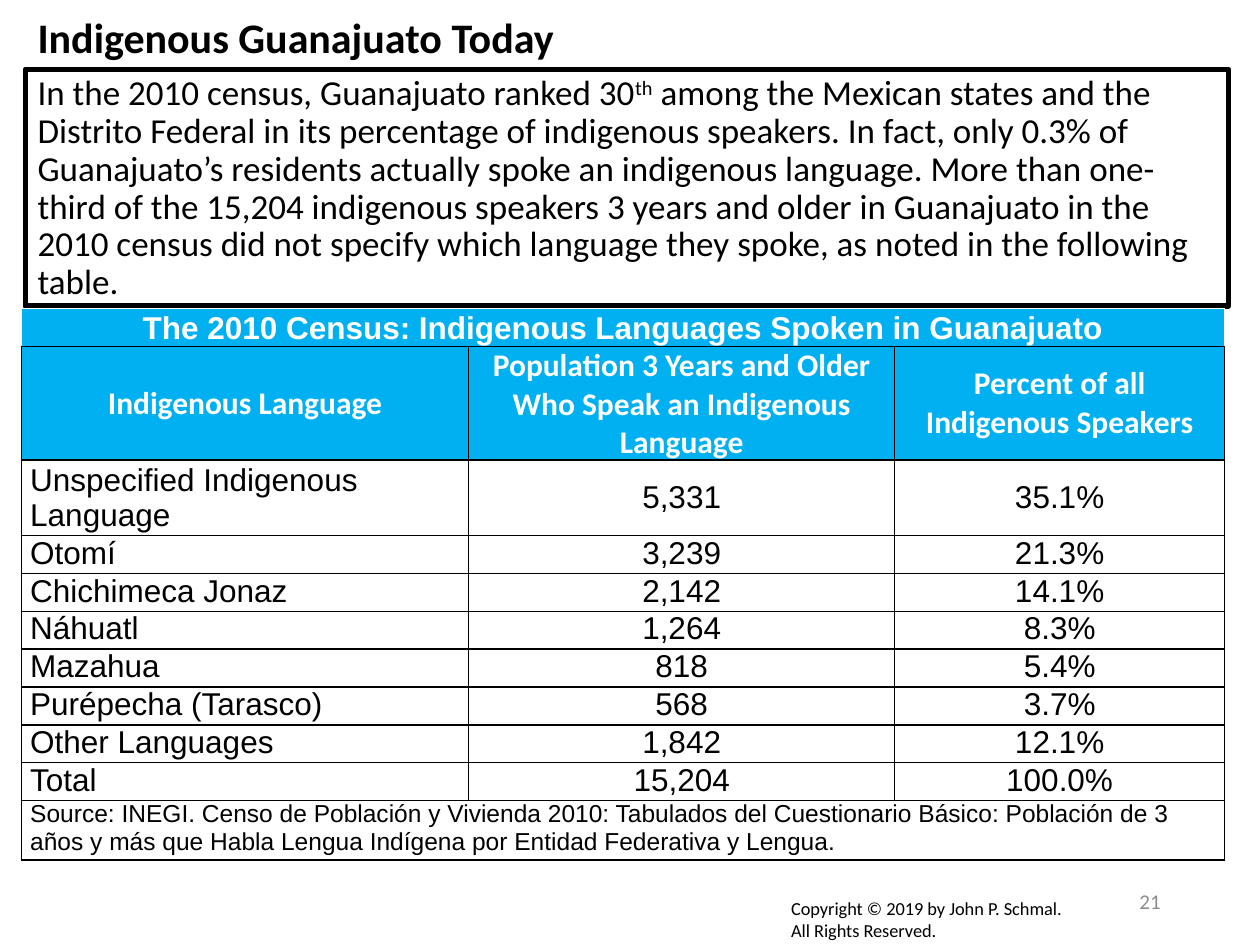
"""Build the slide on indigenous languages spoken in Guanajuato."""

import dataclasses
import typing

import lxml.etree
import pptx
import pptx.dml.color
import pptx.enum.shapes
import pptx.enum.text
import pptx.oxml.ns
import pptx.util

Inches = pptx.util.Inches
Pt = pptx.util.Pt
ALIGN = pptx.enum.text.PP_ALIGN
ANCHOR = pptx.enum.text.MSO_ANCHOR
COLORS = {"black": "000000", "white": "FFFFFF", "header": "00B0F0", "muted": "8C8C8C"}
SIDES = ("L", "R", "T", "B")


@dataclasses.dataclass(frozen=True)
class Language:
    name: str
    speakers: str
    percent: str


@dataclasses.dataclass(frozen=True)
class CellStyle:
    size: float = 18
    font: str = "Arial"
    color: str = "black"
    bold: bool = False
    fill: typing.Optional[str] = None
    anchor: ANCHOR = ANCHOR.TOP
    white_sides: tuple[str, ...] = ()


LANGUAGES = (
    Language("Unspecified Indigenous Language", "5,331", "35.1%"),
    Language("Otomí", "3,239", "21.3%"),
    Language("Chichimeca Jonaz", "2,142", "14.1%"),
    Language("Náhuatl", "1,264", "8.3%"),
    Language("Mazahua", "818", "5.4%"),
    Language("Purépecha (Tarasco)", "568", "3.7%"),
    Language("Other Languages", "1,842", "12.1%"),
    Language("Total", "15,204", "100.0%"),
)
HEADINGS = (
    "Indigenous Language",
    "Population 3 Years and Older Who Speak an Indigenous Language",
    "Percent of all Indigenous Speakers",
)
TABLE_TITLE = "The 2010 Census: Indigenous Languages Spoken in Guanajuato"
SOURCE_NOTE = (
    "Source: INEGI. Censo de Población y Vivienda 2010: Tabulados del Cuestionario Básico: "
    "Población de 3 años y más que Habla Lengua Indígena por Entidad Federativa y Lengua."
)
SUMMARY = (
    "In the 2010 census, Guanajuato ranked 30",
    "th",
    " among the Mexican states and the Distrito Federal in its percentage of indigenous "
    "speakers. In fact, only 0.3% of Guanajuato’s residents actually spoke an indigenous "
    "language. More than one-third of the 15,204 indigenous speakers 3 years and older in "
    "Guanajuato in the 2010 census did not specify which language they spoke, as noted in "
    "the following table.",
)
COLUMN_WIDTHS = (3.55, 3.38, 2.62)
ROW_HEIGHTS = (0.3, 0.9, 0.6) + (0.3,) * 7 + (0.47,)
TITLE_STYLE = CellStyle(color="white", bold=True, fill="header", anchor=ANCHOR.BOTTOM,
                        white_sides=("L", "R", "T"))
HEADING_STYLE = CellStyle(font="Calibri", color="white", bold=True, fill="header",
                          anchor=ANCHOR.MIDDLE)


def rgb(name: str) -> pptx.dml.color.RGBColor:
    """Return the named palette colour."""
    return pptx.dml.color.RGBColor.from_string(COLORS[name])


def write(frame, paragraphs, *, size: float, font: str = "Calibri", color: str = "black",
          bold: bool = False, align=ALIGN.LEFT, anchor=ANCHOR.TOP, before: float = 0,
          after: float = 0, spacing: float = 1.0, superscript: str = "") -> None:
    """Write paragraphs, each a sequence of runs, in one format."""
    frame.word_wrap = True
    frame.vertical_anchor = anchor
    for index, pieces in enumerate(paragraphs):
        paragraph = frame.add_paragraph() if index else frame.paragraphs[0]
        paragraph.alignment = align
        paragraph.space_before, paragraph.space_after = Pt(before), Pt(after)
        paragraph.line_spacing = spacing
        for piece in pieces:
            run = paragraph.add_run()
            run.text = piece
            run.font.size, run.font.name, run.font.bold = Pt(size), font, bold
            run.font.color.rgb = rgb(color)
            if piece == superscript:
                run._r.get_or_add_rPr().set("baseline", "30000")


def add_text(slide, left: float, top: float, width: float, height: float, paragraphs, **style):
    """Add a text box and return its frame."""
    frame = slide.shapes.add_textbox(
        Inches(left), Inches(top), Inches(width), Inches(height)).text_frame
    write(frame, paragraphs, **style)
    return frame


def add_borders(cell, white_sides: tuple[str, ...]) -> None:
    """Outline a cell with one-point lines."""
    properties = cell._tc.get_or_add_tcPr()
    qn = pptx.oxml.ns.qn
    for side in SIDES:
        line = lxml.etree.SubElement(properties, qn(f"a:ln{side}"), w=str(Pt(1)))
        fill = lxml.etree.SubElement(line, qn("a:solidFill"))
        shade = COLORS["white" if side in white_sides else "black"]
        lxml.etree.SubElement(fill, qn("a:srgbClr"), val=shade)


def fill_cell(cell, text: str, style: CellStyle, align) -> None:
    """Format a table cell and write its text."""
    add_borders(cell, style.white_sides)
    cell.margin_left = cell.margin_right = Inches(0.07)
    cell.margin_top = cell.margin_bottom = 0
    if style.fill:
        cell.fill.solid()
        cell.fill.fore_color.rgb = rgb(style.fill)
    else:
        cell.fill.background()
    write(cell.text_frame, [[text]] if text else [], size=style.size, font=style.font,
          color=style.color, bold=style.bold, align=align)
    cell.vertical_anchor = style.anchor


def add_language_table(slide) -> None:
    """Add the census table."""
    table = slide.shapes.add_table(
        len(ROW_HEIGHTS), len(COLUMN_WIDTHS), Inches(0.17), Inches(2.45),
        Inches(sum(COLUMN_WIDTHS)), Inches(sum(ROW_HEIGHTS))).table
    table.first_row = table.horz_banding = False
    for column, width in zip(table.columns, COLUMN_WIDTHS):
        column.width = Inches(width)
    for row, height in zip(table.rows, ROW_HEIGHTS):
        row.height = Inches(height)

    rows = [((TABLE_TITLE, "", ""), TITLE_STYLE, ALIGN.CENTER),
            (HEADINGS, HEADING_STYLE, ALIGN.CENTER)]
    for index, language in enumerate(LANGUAGES):
        anchor = ANCHOR.TOP if index else ANCHOR.MIDDLE
        rows.append((dataclasses.astuple(language), CellStyle(anchor=anchor), ALIGN.LEFT))
    rows.append(((SOURCE_NOTE, "", ""), CellStyle(size=14), ALIGN.LEFT))

    for r, (texts, style, first_align) in enumerate(rows):
        for c, text in enumerate(texts):
            fill_cell(table.cell(r, c), text, style, ALIGN.CENTER if c else first_align)
    for r in (0, len(rows) - 1):
        table.cell(r, 0).merge(table.cell(r, len(COLUMN_WIDTHS) - 1))


def add_summary(slide) -> None:
    """Add the outlined summary of the census."""
    summary = slide.shapes.add_shape(
        pptx.enum.shapes.MSO_SHAPE.RECTANGLE,
        Inches(0.2), Inches(0.55), Inches(9.55), Inches(1.88))
    summary.shadow.inherit = False
    summary.fill.background()
    summary.line.color.rgb = rgb("black")
    summary.line.width = Pt(3)
    write(summary.text_frame, [SUMMARY], size=20, before=7.5, spacing=0.9, superscript="th")


def main() -> None:
    """Build and save the presentation."""
    presentation = pptx.Presentation()
    presentation.slide_width, presentation.slide_height = Inches(10), Inches(7.5)
    slide = presentation.slides.add_slide(presentation.slide_layouts[6])
    add_summary(slide)
    add_text(slide, 7.06, 6.95, 2.25, 0.4, [["21"]], size=12, color="muted",
             align=ALIGN.RIGHT, anchor=ANCHOR.MIDDLE)
    add_text(slide, 0.2, 0.06, 9, 0.47, [["Indigenous Guanajuato Today"]], size=24,
             bold=True, anchor=ANCHOR.MIDDLE, before=4.8, after=6)
    credit = add_text(slide, 6.18, 7.07, 2.48, 0.45, [
        ["Copyright © 2019 by John P. Schmal."], ["All Rights Reserved."]], size=10.5)
    credit.word_wrap = False
    credit.auto_size = pptx.enum.text.MSO_AUTO_SIZE.SHAPE_TO_FIT_TEXT
    add_language_table(slide)
    presentation.save("out.pptx")


if __name__ == "__main__":
    main()
